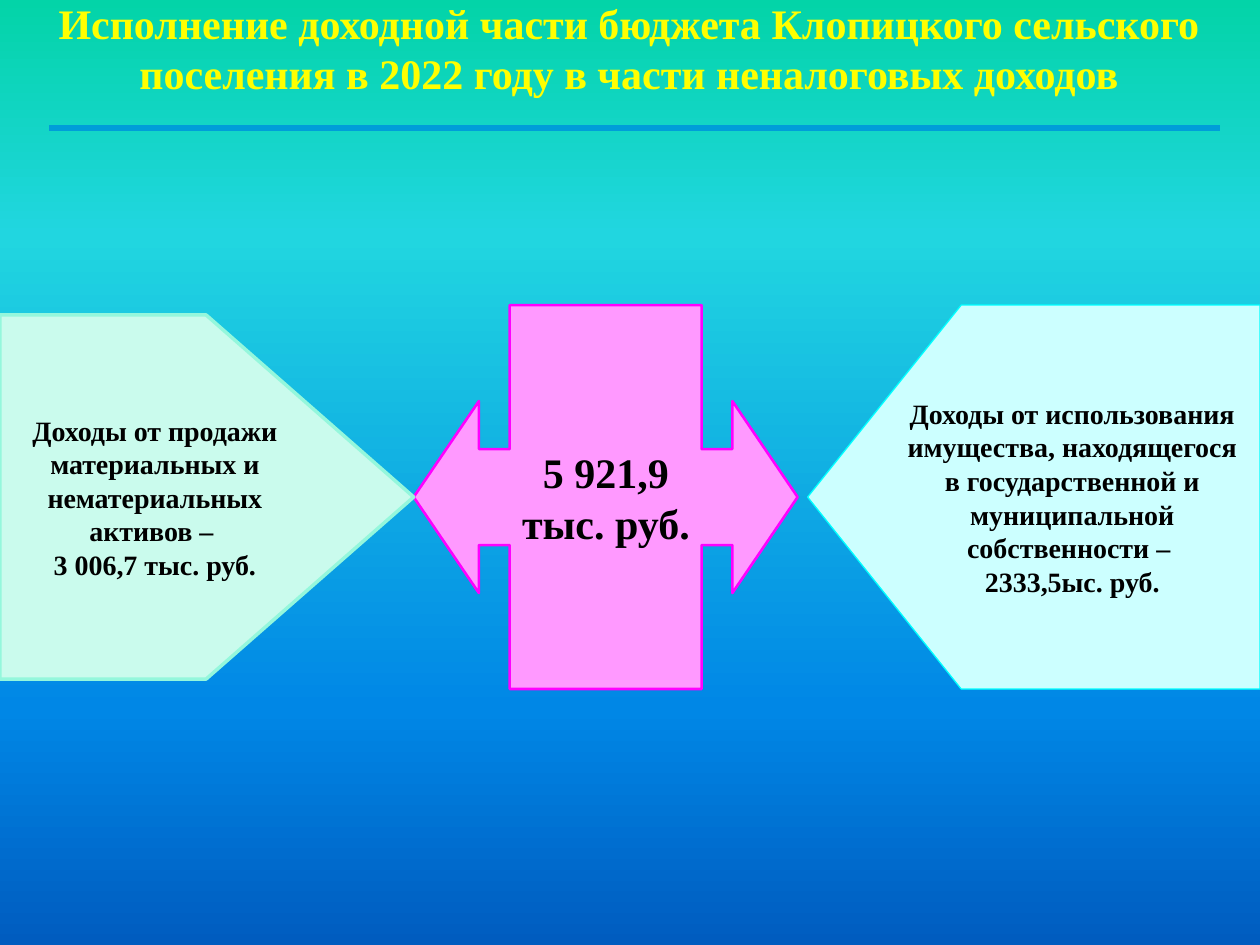
from dataclasses import dataclass

from lxml import etree
from pptx import Presentation
from pptx.dml.color import RGBColor
from pptx.enum.shapes import MSO_CONNECTOR, MSO_SHAPE
from pptx.enum.text import MSO_ANCHOR, PP_ALIGN
from pptx.oxml.ns import qn
from pptx.util import Cm, Pt

STRAIGHT = MSO_CONNECTOR.STRAIGHT
PENTAGON = MSO_SHAPE.PENTAGON
CALLOUT = MSO_SHAPE.UP_DOWN_ARROW_CALLOUT
MIDDLE, BOTTOM = MSO_ANCHOR.MIDDLE, MSO_ANCHOR.BOTTOM
CENTER = PP_ALIGN.CENTER


@dataclass(frozen=True)
class Theme:
    font: str = "Times New Roman"
    big: int = 24
    small: int = 16
    title: str = "FFFF00"
    text: str = "000000"
    rule: str = "009DD9"
    total_fill: str = "FF99FF"
    total_line: str = "FF00FF"
    property_fill: str = "CCFFFF"
    property_line: str = "00FFFF"
    sales_fill: str = "CAFBED"
    sales_line: str = "94F7DC"
    background: tuple = ((0, "03D4A8"), (25, "21D6E0"), (75, "0087E6"), (100, "005CBF"))


THEME = Theme()


def rgb(value):
    return RGBColor.from_string(value)


def set_background(s, stops):
    """Fill the slide with a top-to-bottom gradient of (percent, colour) stops."""
    fill = s.background.fill
    fill.gradient()
    fill.gradient_angle = 270
    gs_list = s.element.find(".//" + qn("a:gsLst"))
    for gs in list(gs_list):
        gs_list.remove(gs)
    for percent, color in stops:
        gs = etree.SubElement(gs_list, qn("a:gs"), pos=str(percent * 1000))
        etree.SubElement(gs, qn("a:srgbClr"), val=color)


def write(tf, text, size=THEME.small, color=THEME.text, anchor=MIDDLE, wrap=True):
    """Write one centred bold paragraph for each line of text."""
    tf.word_wrap = wrap
    tf.vertical_anchor = anchor
    for i, line in enumerate(text.split("\n")):
        p = tf.paragraphs[0] if i == 0 else tf.add_paragraph()
        p.alignment = CENTER
        r = p.add_run()
        r.text = line
        r.font.name = THEME.font
        r.font.size = Pt(size)
        r.font.bold = True
        r.font.color.rgb = rgb(color)


def add_title(s, text):
    sp = s.shapes.add_textbox(Cm(0.58), Cm(0.4), Cm(24.2), Cm(1.58))
    tf = sp.text_frame
    tf.margin_left = tf.margin_right = tf.margin_bottom = 0
    write(tf, text, size=THEME.big, color=THEME.title, anchor=BOTTOM)


def add_rule(s, left, right, y):
    line = s.shapes.add_connector(STRAIGHT, Cm(left), Cm(y), Cm(right), Cm(y))
    line.line.color.rgb = rgb(THEME.rule)
    line.line.width = Pt(3.75)
    etree.SubElement(line.element.spPr, qn("a:effectLst"))


def add_block(s, kind, box, adjustments, fill, line, width, rotation=0, body=None):
    """Add a filled shape; body holds bodyPr attributes that turn its text upright."""
    sp = s.shapes.add_shape(kind, *(Cm(v) for v in box))
    sp.shadow.inherit = False
    sp.rotation = rotation
    for i, value in enumerate(adjustments):
        sp.adjustments[i] = value
    sp.fill.solid()
    sp.fill.fore_color.rgb = rgb(fill)
    sp.line.color.rgb = rgb(line)
    sp.line.width = Pt(width)
    body_pr = sp.element.txBody.find(qn("a:bodyPr"))
    for name, value in (body or {}).items():
        body_pr.set(name, value)
    return sp.text_frame


def main():
    prs = Presentation()
    prs.slide_width, prs.slide_height = Cm(25.4), Cm(19.05)
    s = prs.slides.add_slide(prs.slide_layouts[6])
    set_background(s, THEME.background)

    add_title(s, "Исполнение доходной части бюджета Клопицкого сельского "
                 "поселения в 2022 году в части неналоговых доходов")

    total = add_block(s, CALLOUT, (8.34, 6.15, 7.74, 7.74), (0.25, 0.25, 0.17, 0.5),
                      THEME.total_fill, THEME.total_line, 1.5,
                      rotation=270, body={"vert": "eaVert"})
    write(total, "5 921,9\nтыс. руб.", size=THEME.big, wrap=False)

    add_rule(s, 0.99, 24.59, 2.58)

    use = add_block(s, PENTAGON, (16.28, 6.15, 9.12, 7.74), (0.4,),
                    THEME.property_fill, THEME.property_line, 0.75,
                    rotation=180, body={"rot": "10800000"})
    write(use, "Доходы от использования имущества, находящегося в государственной "
               "и муниципальной собственности – \n2333,5ыс. руб.")

    sales = add_block(s, PENTAGON, (0, 6.35, 8.34, 7.34), (0.57,),
                      THEME.sales_fill, THEME.sales_line, 2)
    write(sales, "Доходы от продажи материальных и нематериальных активов – \n"
                 "3 006,7 тыс. руб.")

    prs.save("out.pptx")


if __name__ == "__main__":
    main()
